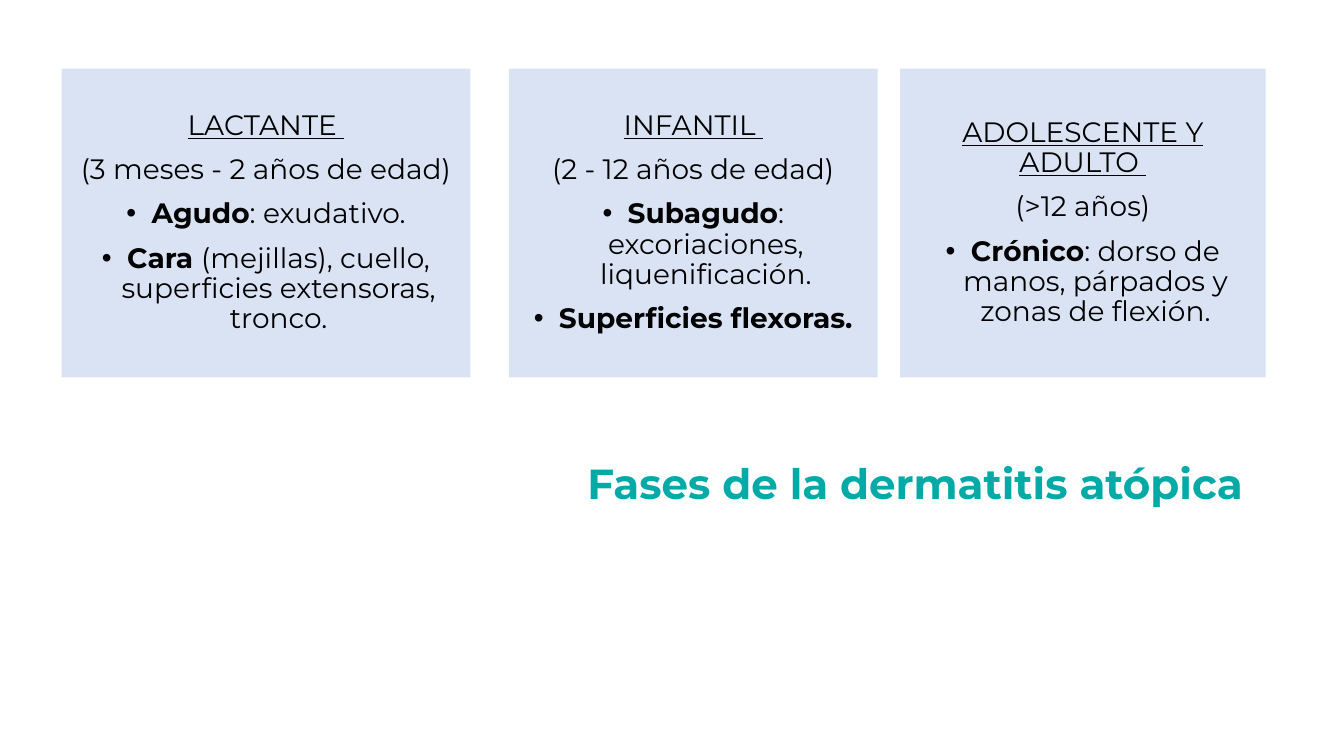
from lxml import etree
from pptx import Presentation
from pptx.dml.color import RGBColor
from pptx.enum.shapes import MSO_SHAPE
from pptx.enum.text import MSO_ANCHOR, PP_ALIGN
from pptx.oxml.ns import qn
from pptx.util import Pt

RECT = MSO_SHAPE.RECTANGLE
MIDDLE = MSO_ANCHOR.MIDDLE
CENTER, RIGHT = PP_ALIGN.CENTER, PP_ALIGN.RIGHT

PALE_BLUE = RGBColor(0xDA, 0xE3, 0xF3)
TEAL = RGBColor(0x00, 0xAA, 0xA7)
BLACK = RGBColor(0, 0, 0)
FONT = "Montserrat"

CARD_TOP, CARD_HEIGHT = 49, 220.5
INDENT = 18

# Each phase: left, width, name, age range, bullets as (bold text, plain text)
PHASES = [
    (44, 292, "LACTANTE ", "(3 meses - 2 años de edad)",
     [("Agudo", ": exudativo."),
      ("Cara ", "(mejillas), cuello, superficies extensoras, tronco.")]),
    (363.5, 263.5, "INFANTIL ", "(2 - 12 años de edad)",
     [("Subagudo", ": excoriaciones, liquenificación."),
      ("Superficies flexoras.", "")]),
    (643, 261, "ADOLESCENTE Y ADULTO ", "(>12 años)",
     [("Crónico", ": dorso de manos, párpados y zonas de flexión.")]),
]


def add_run(p, text, size, color, bold=False, underline=False):
    r = p.add_run()
    r.text = text
    r.font.name = FONT
    r.font.size = Pt(size)
    r.font.color.rgb = color
    r.font.bold = bold
    r.font.underline = underline


def add_paragraph(tf, align, first=False, bullet=False):
    p = tf.paragraphs[0] if first else tf.add_paragraph()
    p.alignment = align
    p.line_spacing = 0.9
    p.space_before = Pt(0 if first else 10)
    if bullet:
        pPr = p._p.get_or_add_pPr()
        pPr.set("marL", str(Pt(INDENT)))
        pPr.set("indent", str(-Pt(INDENT)))
        etree.SubElement(pPr, qn("a:buFont")).set("typeface", "Arial")
        etree.SubElement(pPr, qn("a:buChar")).set("char", "•")
    return p


def add_phase_card(s, left, top, width, height, name, ages, bullets):
    sp = s.shapes.add_shape(RECT, Pt(left), Pt(top), Pt(width), Pt(height))
    sp.shadow.inherit = False
    sp.fill.solid()
    sp.fill.fore_color.rgb = PALE_BLUE
    sp.line.fill.background()
    tf = sp.text_frame
    tf.word_wrap = True
    tf.vertical_anchor = MIDDLE

    # Phase name and age range
    add_run(add_paragraph(tf, CENTER, first=True), name, 20, BLACK, underline=True)
    add_run(add_paragraph(tf, CENTER), ages, 20, BLACK)

    # Clinical features
    for strong, plain in bullets:
        p = add_paragraph(tf, CENTER, bullet=True)
        add_run(p, strong, 20, BLACK, bold=True)
        if plain:
            add_run(p, plain, 20, BLACK)


def add_title(s, left, top, width, height, text):
    sp = s.shapes.add_textbox(Pt(left), Pt(top), Pt(width), Pt(height))
    tf = sp.text_frame
    tf.word_wrap = True
    tf.vertical_anchor = MIDDLE
    add_run(add_paragraph(tf, RIGHT, first=True), text, 30, TEAL, bold=True)


def main():
    prs = Presentation()
    prs.slide_width, prs.slide_height = Pt(960), Pt(540)
    s = prs.slides.add_slide(prs.slide_layouts[6])

    add_title(s, 276, 291, 619, 112, "Fases de la dermatitis atópica")
    for left, width, name, ages, bullets in PHASES:
        add_phase_card(s, left, CARD_TOP, width, CARD_HEIGHT, name, ages, bullets)

    prs.save("out.pptx")


if __name__ == "__main__":
    main()
